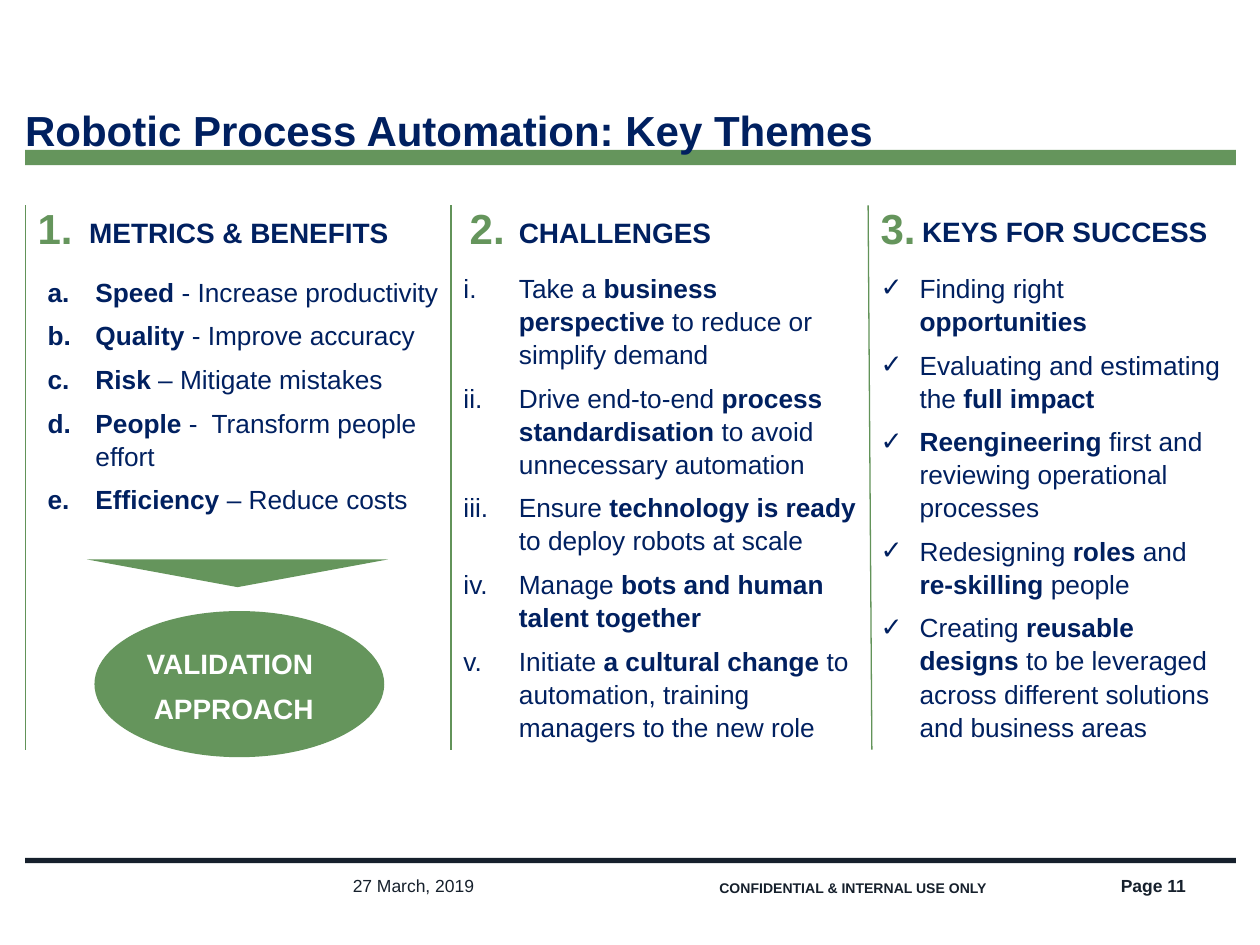
"""Build the key themes slide on a grid of 100 columns by 75 rows."""
from dataclasses import dataclass

from lxml import etree
from pptx import Presentation
from pptx.dml.color import RGBColor
from pptx.enum import shapes, text
from pptx.oxml import ns
from pptx.util import Emu, Inches, Pt

GREEN = RGBColor(0x65, 0x95, 0x5C)
RULE = RGBColor(0x62, 0x93, 0x59)
NAVY = RGBColor(0x00, 0x20, 0x60)
INK = RGBColor(0x16, 0x20, 0x2C)
WHITE = RGBColor(0xFF, 0xFF, 0xFF)
FONT = "Arial"
WIDTH, HEIGHT = Inches(10), Inches(7.5)
COLS, ROWS = 100, 75
LEFT, BAR = 2, 96.1


@dataclass(frozen=True)
class Box:
    """A rectangle in grid columns and rows."""

    col: float
    row: float
    cols: float
    rows: float

    def emu(self) -> tuple[Emu, Emu, Emu, Emu]:
        """Return left, top, width and height on the slide."""
        return across(self.col), down(self.row), across(self.cols), down(self.rows)


@dataclass(frozen=True)
class Style:
    """How the text of a box looks."""

    size: float
    color: RGBColor
    bold: bool = False
    align: text.PP_ALIGN = text.PP_ALIGN.LEFT
    after: float = 0
    inset: bool = True
    middle: bool = False
    spacing: float = 1.05


@dataclass(frozen=True)
class Bullet:
    """A list marker: an automatic number scheme or a character."""

    tag: str
    attr: str
    value: str
    indent: float


@dataclass(frozen=True)
class Theme:
    """One numbered column; text between asterisks is bold."""

    number: str
    number_col: float
    heading: str
    heading_box: Box
    rule: tuple[float, float]
    body_box: Box
    bullet: Bullet
    items: tuple[str, ...]


NUMBER = Style(24, GREEN, bold=True)
HEADING = Style(16, NAVY, bold=True, after=6)
BODY = Style(15, NAVY, after=6)
TITLE = Style(24, NAVY, bold=True, inset=False)
CALLOUT = Style(16, WHITE, bold=True, align=text.PP_ALIGN.CENTER, after=5.5)

THEMES = (
    Theme("1.", 2, "METRICS & BENEFITS", Box(6.1, 16.5, 29.7, 3.7), (2, 2),
          Box(2.8, 21.3, 34.6, 19.5), Bullet("a:buAutoNum", "type", "alphaLcPeriod", 3.8),
          ("*Speed* - Increase productivity",
           "*Quality *- Improve accuracy",
           "*Risk* – Mitigate mistakes",
           "*People* -  Transform people effort",
           "*Efficiency* – Reduce costs")),
    Theme("2.", 36.3, "CHALLENGES", Box(40.2, 16.5, 29.7, 3.7), (35.8, 35.8),
          Box(35.8, 21, 33.2, 37.2), Bullet("a:buAutoNum", "type", "romanLcPeriod", 4.4),
          ("Take a *business perspective* to reduce or simplify demand",
           "Drive end-to-end *process standardisation* to avoid unnecessary automation",
           "Ensure *technology is ready *to deploy robots at scale",
           "Manage *bots and human talent together*",
           "Initiate *a cultural change* to automation, training managers to the new role")),
    Theme("3.", 68.9, "KEYS FOR SUCCESS", Box(72.2, 16.4, 27, 3.7), (68.9, 69.2),
          Box(68.9, 21, 29.1, 40.6), Bullet("a:buChar", "char", "✓", 3.1),
          ("Finding right *opportunities*",
           "Evaluating and estimating the *full impact*",
           "*Reengineering* first and reviewing operational processes",
           "Redesigning *roles* and *re-skilling* people",
           "Creating *reusable designs* to be leveraged across different solutions"
           " and business areas")),
)


def across(cols: float) -> Emu:
    """Turn grid columns into a length."""
    return Emu(round(WIDTH * cols / COLS))


def down(rows: float) -> Emu:
    """Turn grid rows into a length."""
    return Emu(round(HEIGHT * rows / ROWS))


def add_bullet(p, bullet: Bullet) -> None:
    """Give a paragraph a hanging indent and a list marker."""
    pPr = p._p.get_or_add_pPr()
    indent = across(bullet.indent)
    pPr.set("marL", str(indent))
    pPr.set("indent", str(-indent))
    etree.SubElement(pPr, ns.qn("a:buFont")).set("typeface", FONT)
    etree.SubElement(pPr, ns.qn(bullet.tag)).set(bullet.attr, bullet.value)


def add_text(s, box: Box, style: Style, *lines: str, bullet: Bullet | None = None) -> None:
    """Add a text box with one paragraph per line."""
    tf = s.shapes.add_textbox(*box.emu()).text_frame
    tf.word_wrap = True
    if not style.inset:
        tf.margin_left = tf.margin_top = tf.margin_right = tf.margin_bottom = 0
    if style.middle:
        tf.vertical_anchor = text.MSO_ANCHOR.MIDDLE
    for i, line in enumerate(lines):
        p = tf.add_paragraph() if i else tf.paragraphs[0]
        if bullet:
            add_bullet(p, bullet)
        p.alignment = style.align
        p.line_spacing = style.spacing
        p.space_after = Pt(style.after)
        for j, part in enumerate(line.split("*")):
            if part:
                r = p.add_run()
                r.text = part
                r.font.name = FONT
                r.font.size = Pt(style.size)
                r.font.bold = style.bold or j % 2 == 1
                r.font.color.rgb = style.color


def add_block(s, kind: shapes.MSO_SHAPE, box: Box, color: RGBColor, rotation: float = 0) -> None:
    """Add a plain filled shape."""
    sp = s.shapes.add_shape(kind, *box.emu())
    sp.shadow.inherit = False
    sp.fill.solid()
    sp.fill.fore_color.rgb = color
    sp.line.fill.background()
    sp.rotation = rotation


def add_rule(s, start: float, end: float) -> None:
    """Add the thin line on the left of a column."""
    line = s.shapes.add_connector(shapes.MSO_CONNECTOR.STRAIGHT, across(start), down(16.3),
                                  across(end), down(59.5))
    line.line.color.rgb = RULE
    line.line.width = Pt(0.75)
    etree.SubElement(line._element.spPr, ns.qn("a:effectLst"))


def add_theme(s, theme: Theme) -> None:
    """Add a column with its rule, number, heading and list."""
    add_rule(s, *theme.rule)
    add_text(s, Box(theme.number_col, 15.4, 13.6, 5), NUMBER, theme.number)
    add_text(s, theme.heading_box, HEADING, theme.heading)
    add_text(s, theme.body_box, BODY, *theme.items, bullet=theme.bullet)


def footer(size: float, bold: bool, align: text.PP_ALIGN = text.PP_ALIGN.LEFT) -> Style:
    """Return the style of a footer text."""
    return Style(size, INK, bold, align, inset=False, middle=True, spacing=1)


def main() -> None:
    """Build and save the slide."""
    prs = Presentation()
    prs.slide_width, prs.slide_height = WIDTH, HEIGHT
    s = prs.slides.add_slide(prs.slide_layouts[6])
    add_block(s, shapes.MSO_SHAPE.RECTANGLE, Box(LEFT, 11.9, BAR, 1.2), GREEN)
    add_block(s, shapes.MSO_SHAPE.RECTANGLE, Box(LEFT, 68.1, BAR, 0.4), INK)
    add_text(s, Box(57.1, 70, 25.6, 0.9), footer(8, True), "CONFIDENTIAL & INTERNAL USE ONLY")
    add_text(s, Box(28, 69.5, 23.3, 1.6), footer(10, False), "27 March, 2019")
    add_text(s, Box(86.2, 69.5, 7.9, 1.6), footer(10, True, text.PP_ALIGN.RIGHT), "Page 11")
    add_text(s, Box(LEFT, 8.1, 71.7, 3.9), TITLE, "Robotic Process Automation: Key Themes")
    for theme in THEMES:
        add_theme(s, theme)
    add_block(s, shapes.MSO_SHAPE.OVAL, Box(7.5, 48.5, 23, 11.6), GREEN)
    add_block(s, shapes.MSO_SHAPE.ISOSCELES_TRIANGLE, Box(6.9, 44.4, 23.9, 2.2), GREEN, 180)
    add_text(s, Box(3.7, 50.7, 29.7, 7.2), CALLOUT, "VALIDATION ", "APPROACH")
    prs.save("out.pptx")


if __name__ == "__main__":
    main()
